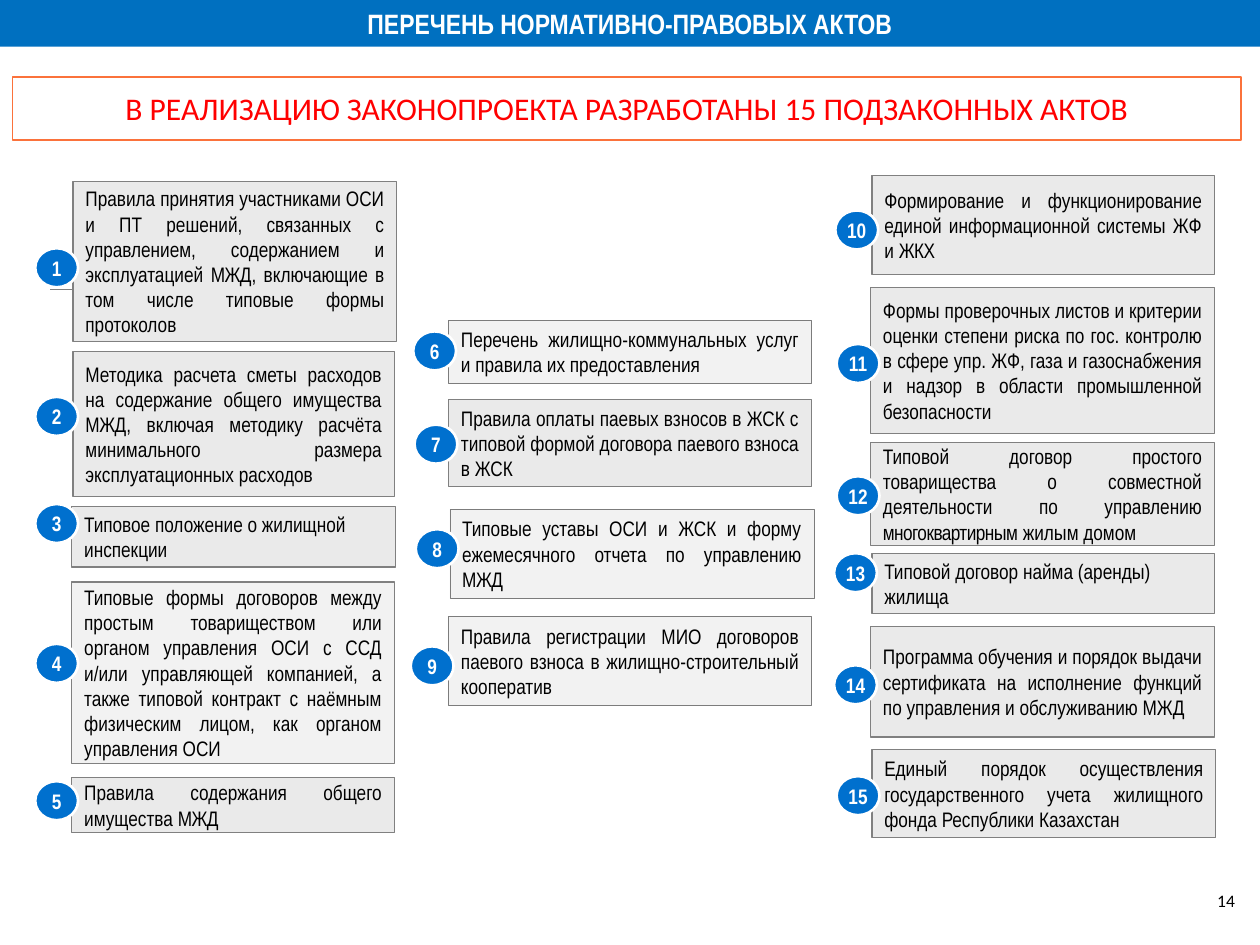
from dataclasses import dataclass

from lxml.etree import SubElement
from pptx import Presentation
from pptx.dml.color import RGBColor
from pptx.enum.shapes import MSO_CONNECTOR, MSO_SHAPE
from pptx.enum.text import MSO_ANCHOR, PP_ALIGN
from pptx.oxml.ns import qn
from pptx.shapes.autoshape import Shape
from pptx.slide import Slide
from pptx.util import Inches, Pt

BANNER_BLUE = RGBColor(0x00, 0x70, 0xC0)
BADGE_BLUE = RGBColor(0x00, 0x70, 0xCE)
ORANGE = RGBColor(0xFB, 0x72, 0x3B)
RED = RGBColor(0xFF, 0x00, 0x00)
WHITE = RGBColor(0xFF, 0xFF, 0xFF)
BLACK = RGBColor(0x00, 0x00, 0x00)
CARD_GRAY = RGBColor(0xEA, 0xEA, 0xEA)
LIGHT_GRAY = RGBColor(0xF2, 0xF2, 0xF2)
BORDER_GRAY = RGBColor(0x80, 0x80, 0x80)
THIN_GRAY = RGBColor(0x7C, 0x7C, 0x7C)
TICK_GRAY = RGBColor(0xA6, 0xA6, 0xA6)

NARROW = "Arial Narrow"
BADGE_WIDTH, BADGE_HEIGHT = 0.34, 0.31


@dataclass(frozen=True)
class Style:
    fill: RGBColor | None = None
    line: RGBColor | None = None
    line_width: float = 0.75


NORMAL = Style(CARD_GRAY, BORDER_GRAY)
LIGHT = Style(LIGHT_GRAY, BORDER_GRAY)
THIN = Style(LIGHT_GRAY, THIN_GRAY, 0.25)
BADGE = Style(BADGE_BLUE, WHITE, 1.5)


@dataclass(frozen=True)
class Card:
    left: float
    top: float
    width: float
    height: float
    badge_left: float
    badge_top: float
    text: str
    condensed: str = ""  # word set with tighter letter spacing
    style: Style = NORMAL
    align: PP_ALIGN = PP_ALIGN.JUSTIFY


@dataclass(frozen=True)
class Tick:
    left: float
    right: float
    height: float
    color: RGBColor = TICK_GRAY
    line_width: float = 0.5


# Numbered in reading order: left, middle and right column
CARDS = [
    Card(0.58, 1.44, 2.57, 1.27, 0.28, 1.97,
         "Правила принятия участниками ОСИ и ПТ решений, связанных с управлением, содержанием и "
         "эксплуатацией МЖД, включающие в том числе типовые формы протоколов", "МЖД"),
    Card(0.58, 2.79, 2.55, 1.15, 0.28, 3.15,
         "Методика расчета сметы расходов на содержание общего имущества МЖД, включая методику "
         "расчёта минимального размера эксплуатационных расходов", "МЖД"),
    Card(0.57, 4.02, 2.57, 0.48, 0.28, 4.0,
         "Типовое положение о жилищной инспекции", align=PP_ALIGN.LEFT),
    Card(0.57, 4.62, 2.56, 1.44, 0.28, 5.11,
         "Типовые формы договоров между простым товариществом или органом управления ОСИ с ССД "
         "и/или управляющей компанией, а также типовой контракт с наёмным физическим лицом, "
         "как органом управления ОСИ", style=LIGHT),
    Card(0.57, 6.17, 2.56, 0.44, 0.28, 6.2,
         "Правила содержания общего имущества МЖД", "МЖД"),
    Card(3.56, 2.54, 2.88, 0.5, 3.28, 2.63,
         "Перечень жилищно-коммунальных услуг и правила их предоставления", style=THIN),
    Card(3.56, 3.17, 2.88, 0.69, 3.29, 3.37,
         "Правила оплаты паевых взносов в ЖСК с типовой формой договора паевого взноса в ЖСК"),
    Card(3.57, 4.04, 2.89, 0.71, 3.3, 4.2,
         "Типовые уставы ОСИ и ЖСК и форму ежемесячного отчета по управлению МЖД", "МЖД", THIN),
    Card(3.56, 4.89, 2.88, 0.71, 3.26, 5.13,
         "Правила регистрации МИО договоров паевого взноса в жилищно-строительный кооператив",
         style=THIN),
    Card(6.92, 1.39, 2.72, 0.79, 6.63, 1.67,
         "Формирование и функционирование единой информационной системы ЖФ и ЖКХ", "ЖКХ"),
    Card(6.91, 2.28, 2.73, 1.16, 6.64, 2.73,
         "Формы проверочных листов и критерии оценки степени риска по гос. контролю в сфере "
         "упр. ЖФ, газа и газоснабжения и надзор в области промышленной безопасности"),
    Card(6.91, 3.51, 2.73, 0.82, 6.64, 3.78,
         "Типовой договор простого товарищества о совместной деятельности по управлению "
         "многоквартирным жилым домом", "многоквартирным"),
    Card(6.92, 4.39, 2.72, 0.48, 6.62, 4.39,
         "Типовой договор найма (аренды) жилища", align=PP_ALIGN.LEFT),
    Card(6.91, 4.97, 2.73, 0.88, 6.62, 5.28,
         "Программа обучения и порядок выдачи сертификата на исполнение функций по управления "
         "и обслуживанию МЖД"),
    Card(6.92, 5.95, 2.73, 0.7, 6.64, 6.16,
         "Единый порядок осуществления государственного учета жилищного фонда "
         "Республики Казахстан"),
]

TICKS = [
    Tick(3.35, 3.57, 3.58),
    Tick(0.39, 0.6, 5.22),
    Tick(0.39, 0.6, 4.27),
    Tick(0.4, 0.58, 2.3, BORDER_GRAY, 0.75),
    Tick(0.39, 0.56, 3.42, BORDER_GRAY, 0.75),
]


def add_box(slide: Slide, kind: MSO_SHAPE, left: float, top: float, width: float,
            height: float, style: Style) -> Shape:
    shape = slide.shapes.add_shape(kind, Inches(left), Inches(top), Inches(width), Inches(height))
    shape.shadow.inherit = False
    if style.fill is None:
        shape.fill.background()
    else:
        shape.fill.solid()
        shape.fill.fore_color.rgb = style.fill
    if style.line is None:
        shape.line.fill.background()
    else:
        shape.line.color.rgb = style.line
        shape.line.width = Pt(style.line_width)
    return shape


def write(shape: Shape, text: str, size: float, color: RGBColor, align: PP_ALIGN,
          font: str = NARROW, bold: bool = False, condensed: str = "") -> None:
    frame = shape.text_frame
    frame.word_wrap = True
    frame.vertical_anchor = MSO_ANCHOR.MIDDLE
    paragraph = frame.paragraphs[0]
    paragraph.alignment = align
    parts = text.partition(condensed) if condensed else (text,)
    for part in filter(None, parts):
        run = paragraph.add_run()
        run.text = part
        run.font.name = font
        run.font.size = Pt(size)
        run.font.bold = bold
        run.font.color.rgb = color
        if part == condensed:
            run.font._element.set("spc", "-30")


def add_tick(slide: Slide, tick: Tick) -> None:
    connector = slide.shapes.add_connector(
        MSO_CONNECTOR.STRAIGHT, Inches(tick.left), Inches(tick.height),
        Inches(tick.right), Inches(tick.height))
    connector.line.color.rgb = tick.color
    connector.line.width = Pt(tick.line_width)
    SubElement(connector._element.spPr, qn("a:effectLst"))


def add_card(slide: Slide, number: int, card: Card) -> None:
    box = add_box(slide, MSO_SHAPE.RECTANGLE, card.left, card.top, card.width, card.height,
                  card.style)
    write(box, card.text, 12, BLACK, card.align, condensed=card.condensed)

    badge = add_box(slide, MSO_SHAPE.OVAL, card.badge_left, card.badge_top,
                    BADGE_WIDTH, BADGE_HEIGHT, BADGE)
    write(badge, str(number), 12, WHITE, PP_ALIGN.CENTER, bold=True)
    frame = badge.text_frame
    frame.word_wrap = False
    frame.margin_left = frame.margin_right = frame.margin_top = frame.margin_bottom = 0
    frame.paragraphs[0].space_before = Pt(2.4)


def main() -> None:
    presentation = Presentation()
    presentation.slide_width = Inches(10)
    presentation.slide_height = Inches(7.5)
    slide = presentation.slides.add_slide(presentation.slide_layouts[6])

    # Title banner
    banner = add_box(slide, MSO_SHAPE.RECTANGLE, 0, 0, 10, 0.37, Style(BANNER_BLUE))
    write(banner, "ПЕРЕЧЕНЬ НОРМАТИВНО-ПРАВОВЫХ АКТОВ", 16, WHITE, PP_ALIGN.CENTER, bold=True)

    # Framed headline
    headline = add_box(slide, MSO_SHAPE.RECTANGLE, 0.1, 0.61, 9.75, 0.5, Style(None, ORANGE, 1))
    write(headline, "В РЕАЛИЗАЦИЮ ЗАКОНОПРОЕКТА РАЗРАБОТАНЫ 15 ПОДЗАКОННЫХ АКТОВ", 18, RED,
          PP_ALIGN.CENTER, "Calibri")

    # Short lines behind the cards, then the numbered cards
    for tick in TICKS:
        add_tick(slide, tick)
    for number, card in enumerate(CARDS, start=1):
        add_card(slide, number, card)

    # Page number
    page_number = slide.shapes.add_textbox(Inches(7.62), Inches(6.95), Inches(2.25), Inches(0.4))
    write(page_number, "14", 10, BLACK, PP_ALIGN.RIGHT, "Calibri")
    page_number.text_frame.margin_right = Inches(0.07)

    presentation.save("out.pptx")


if __name__ == "__main__":
    main()
